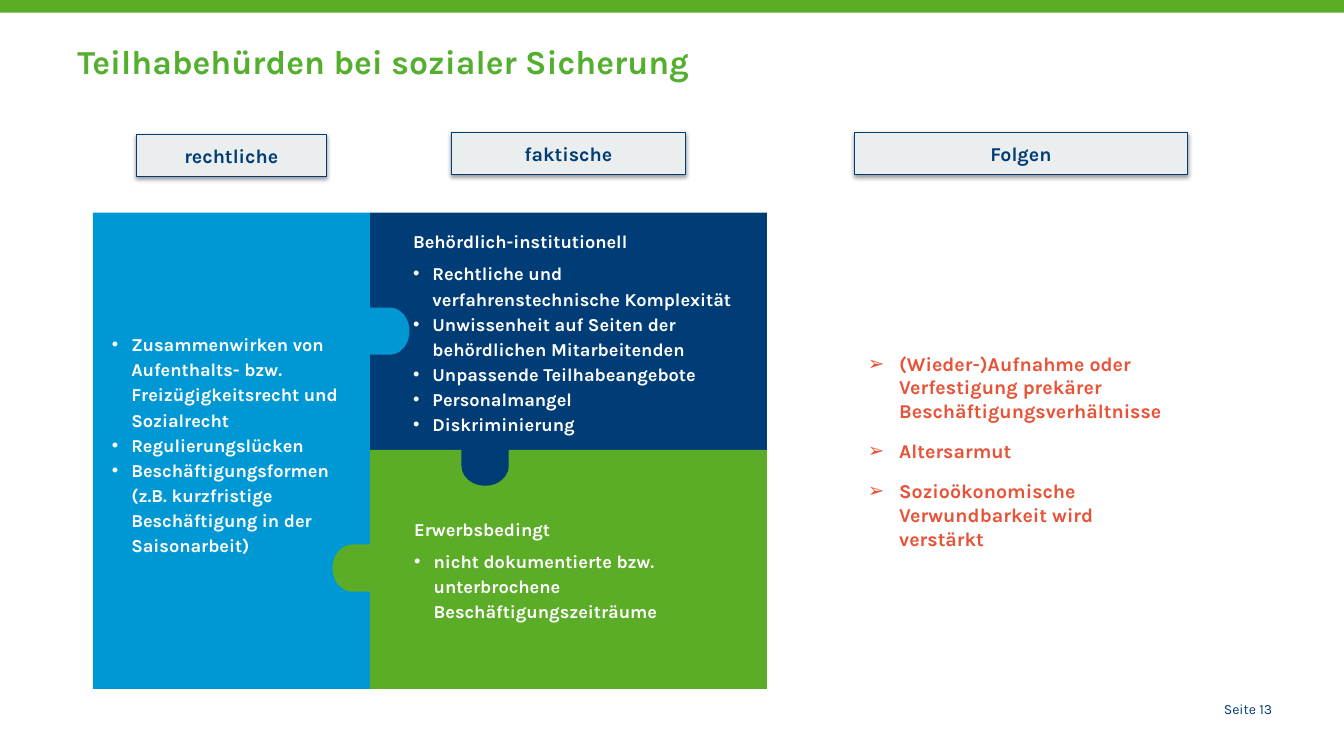
import pptx
import pptx.util
import pptx.dml.color
import pptx.enum.shapes
import pptx.enum.text
import pptx.oxml
import pptx.oxml.ns

Cm = pptx.util.Cm
Pt = pptx.util.Pt
KIND = pptx.enum.shapes.MSO_SHAPE
ALIGN = pptx.enum.text.PP_ALIGN
ANCHOR = pptx.enum.text.MSO_ANCHOR

NAVY, BLUE, GREEN = "003C76", "0098D4", "5BAC26"
WHITE, GREY, RED, LEAF = "FFFFFF", "EAEEEE", "E85236", "54AF2E"


def tint(code):
    return pptx.dml.color.RGBColor.from_string(code)


def node(text):
    return pptx.oxml.parse_xml(text.replace(" ", f" {pptx.oxml.ns.nsdecls('a')} ", 1))


class Deck:
    """Holds the style and the current slide and draws each kind of element."""

    font = "Karla"

    def __init__(self):
        self.file = pptx.Presentation()
        self.file.slide_width = Cm(33.87)
        self.file.slide_height = Cm(19.05)
        self.slide = self.file.slides.add_slide(self.file.slide_layouts[6])

    def block(self, box, fill, kind=KIND.RECTANGLE, turn=0):
        shape = self.slide.shapes.add_shape(kind, *map(Cm, box))
        shape.shadow.inherit = False
        shape.fill.solid()
        shape.fill.fore_color.rgb = tint(fill)
        shape.line.fill.background()
        shape.rotation = turn
        return shape

    def label(self, box, text):
        shape = self.block(box, GREY)
        shape.line.color.rgb = tint(NAVY)
        shape.line.width = Pt(0.75)
        effect = shape._element.spPr.find(pptx.oxml.ns.qn("a:effectLst"))
        effect.append(node(
            f'<a:outerShdw blurRad="{Pt(3.1)}" dist="{Pt(1.6)}" dir="5400000" rotWithShape="0">'
            '<a:srgbClr val="000000"><a:alpha val="38000"/></a:srgbClr></a:outerShdw>'))
        self.frame(shape, ANCHOR.MIDDLE)
        self.line(shape, text, 14, NAVY, align=ALIGN.CENTER)

    def area(self, box, anchor=ANCHOR.MIDDLE, left=0.25, right=0.25):
        shape = self.slide.shapes.add_textbox(*map(Cm, box))
        self.frame(shape, anchor, left, right)
        return shape

    def frame(self, shape, anchor, left=0.25, right=0.25):
        frame = shape.text_frame
        frame.word_wrap = True
        frame.vertical_anchor = anchor
        frame.margin_left, frame.margin_right = Cm(left), Cm(right)
        frame.margin_top = frame.margin_bottom = Cm(0.13)

    def line(self, shape, text, size, color, bold=True, align=ALIGN.LEFT, space=1.0, after=0):
        frame = shape.text_frame
        first = frame.paragraphs[0]
        para = frame.add_paragraph() if first.runs else first
        para.alignment = align
        para.line_spacing = space
        para.space_after = Pt(after)
        run = para.add_run()
        run.text = text
        run.font.name = self.font
        run.font.size = Pt(size)
        run.font.bold = bold
        run.font.color.rgb = tint(color)
        return para

    def points(self, shape, items, size, color, mark="•", inset=0.49, **style):
        for item in items:
            props = self.line(shape, item, size, color, **style)._p.get_or_add_pPr()
            props.set("marL", str(Cm(inset)))
            props.set("indent", str(-Cm(inset)))
            props.append(node('<a:buFont typeface="Arial"/>'))
            props.append(node(f'<a:buChar char="{mark}"/>'))

    def topic(self, box, head, items):
        shape = self.area(box, left=0.1, right=0.1)
        self.line(shape, head, 13, WHITE, space=1.15, after=5)
        self.points(shape, items, 13, WHITE, space=1.15)


def main():
    deck = Deck()
    deck.block((0, -0.08, 33.87, 0.4), GREEN)
    title = deck.area((1.7, 0.76, 30.48, 3.18), ANCHOR.TOP)
    deck.line(title, "Teilhabehürden bei sozialer Sicherung", 24, LEAF, space=1.14)
    page = deck.area((28.8, 17.53, 3.51, 0.69), ANCHOR.TOP)
    deck.line(page, "Seite 13", 10, NAVY, bold=False, align=ALIGN.RIGHT)

    for left, top, width, text in (
        (3.43, 3.38, 4.8, "rechtliche"),
        (11.38, 3.33, 5.89, "faktische"),
        (21.54, 3.33, 8.38, "Folgen"),
    ):
        deck.label((left, top, width, 1.07), text)

    west, mid, east = 2.34, 9.33, 19.33
    top, half, base = 5.36, 11.34, 17.36
    deck.block((west, top, mid - west, base - top), BLUE)
    deck.block((mid, top, east - mid, half - top), NAVY)
    deck.block((mid, half, east - mid, base - half), GREEN)
    for left, high, fill, turn in (
        (8.38, 13.72, GREEN, 180),
        (mid, 7.75, BLUE, 0),
        (11.73, 11.15, NAVY, 90),
    ):
        deck.block((left, high, 0.99, 1.19), fill, KIND.FLOWCHART_DELAY, turn)

    legal = deck.area((2.82, 6.12, 6.43, 10.1), left=0)
    deck.points(legal, (
        "Zusammenwirken von Aufenthalts- bzw. Freizügigkeitsrecht und Sozialrecht",
        "Regulierungslücken",
        "Beschäftigungsformen (z.B. kurzfristige Beschäftigung in der Saisonarbeit)",
    ), 13, WHITE, space=1.15)
    deck.topic((10.31, 5.66, 8.79, 5.38), "Behördlich-institutionell", (
        "Rechtliche und verfahrenstechnische Komplexität",
        "Unwissenheit auf Seiten der behördlichen Mitarbeitenden",
        "Unpassende Teilhabeangebote",
        "Personalmangel",
        "Diskriminierung",
    ))
    deck.topic((10.34, 12.27, 8.38, 4.11), "Erwerbsbedingt", (
        "nicht dokumentierte bzw. unterbrochene Beschäftigungszeiträume",
    ))

    result = deck.block((21.62, top, 8.38, base - top), WHITE)
    deck.frame(result, ANCHOR.MIDDLE)
    deck.points(result, (
        "(Wieder-)Aufnahme oder Verfestigung prekärer Beschäftigungsverhältnisse",
        "Altersarmut",
        "Sozioökonomische Verwundbarkeit wird verstärkt",
    ), 14, RED, mark="➢", inset=0.79, after=12)
    deck.file.save("out.pptx")


if __name__ == "__main__":
    main()
